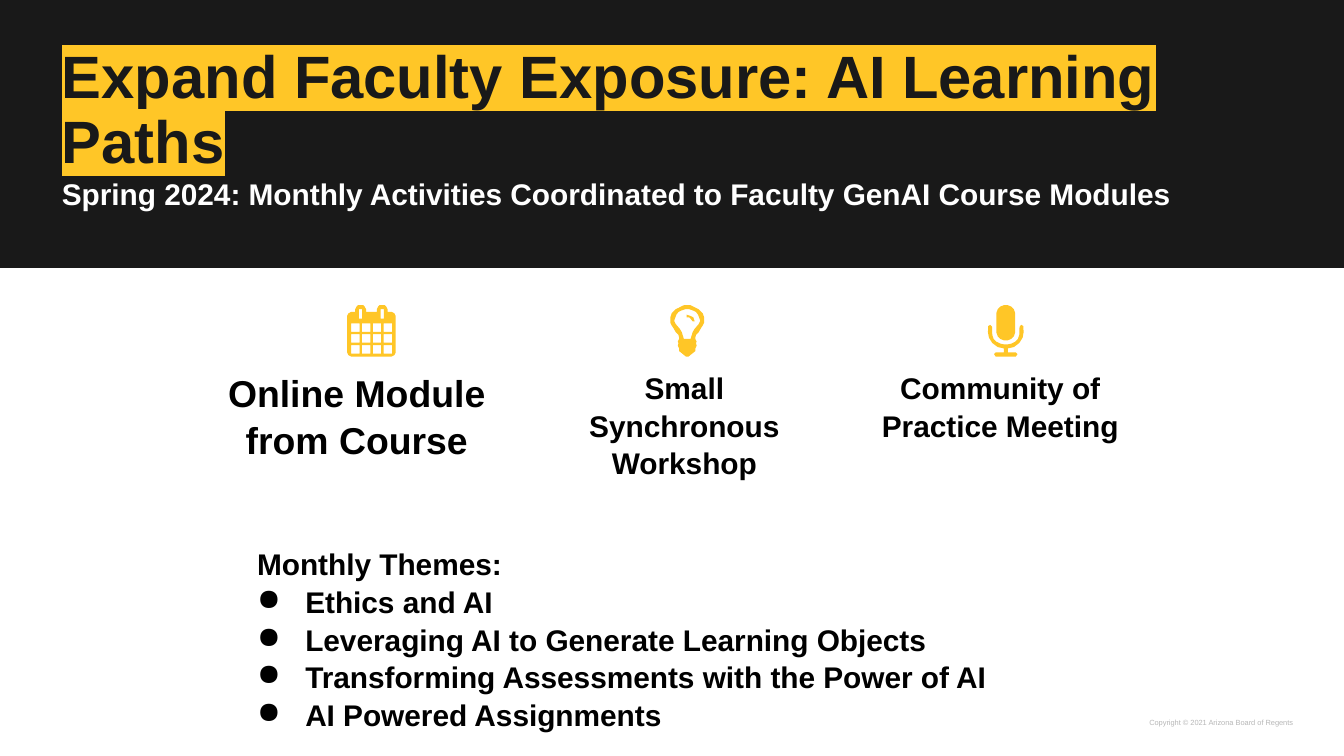
from dataclasses import dataclass

from lxml import etree
from pptx import Presentation
from pptx.dml.color import RGBColor
from pptx.enum.shapes import MSO_SHAPE
from pptx.enum.text import PP_ALIGN
from pptx.oxml.ns import qn
from pptx.util import Cm, Pt

LEFT, CENTER, RIGHT = PP_ALIGN.LEFT, PP_ALIGN.CENTER, PP_ALIGN.RIGHT
RECTANGLE = MSO_SHAPE.RECTANGLE


@dataclass(frozen=True)
class Theme:
    font: str = "Arial"
    dark: str = "191919"
    gold: str = "FFC627"
    white: str = "FFFFFF"
    black: str = "000000"
    grey: str = "B7B7B7"
    title: int = 32
    lead: int = 20
    body: int = 16
    credit: int = 4


THEME = Theme()
GRID = 38  # icon drawings are 38 units tall


def rgb(value):
    return RGBColor.from_string(value)


def add_text(slide, box, lines, size, color, bold=True, align=LEFT,
             spacing=1.05, inset=0, highlight=None):
    tf = slide.shapes.add_textbox(*box).text_frame
    tf.word_wrap = True
    tf.margin_left = tf.margin_right = tf.margin_top = tf.margin_bottom = inset
    tf.text = "\n".join(lines)
    for p in tf.paragraphs:
        p.alignment, p.line_spacing = align, spacing
        for r in p.runs:
            font = r.font
            font.name, font.size, font.bold = THEME.font, Pt(size), bold
            font.color.rgb = rgb(color)
            if highlight:
                mark = etree.Element(qn("a:highlight"))
                etree.SubElement(mark, qn("a:srgbClr"), val=highlight)
                r._r.rPr.find(qn("a:solidFill")).addnext(mark)
    return tf


def indent(p, margin, first=0, bullet=None):
    pPr = p._p.get_or_add_pPr()
    pPr.set("marL", str(margin))
    pPr.set("indent", str(first))
    if bullet:
        color = etree.SubElement(pPr, qn("a:buClr"))
        etree.SubElement(color, qn("a:srgbClr"), val=THEME.black)
        etree.SubElement(pPr, qn("a:buChar"), char=bullet)


# Icon outlines
def rect(x, y, w, h):
    return [(x, y), (x + w, y), (x + w, y + h), (x, y + h)]


def mirror(half, axis):
    """Close a right-hand half outline, given as offsets from the axis."""
    return ([(axis + x, y) for x, y in half]
            + [(axis - x, y) for x, y in reversed(half)])


def calendar():
    body = mirror([(4, 5), (4, 3), (5, 1), (6, 0), (10, 0), (11, 1), (12, 3),
                   (12, 5), (15, 5), (17, 6), (18, 8), (18, 35), (17, 37),
                   (15, 38)], 18)
    rings = [rect(x, 3, 2.5, 7) for x in (8.75, 24.75)]
    days = [rect(3 + 8 * col, 13.5 + 8 * row, 6.3, 6.3)
            for row in range(3) for col in range(4)]
    return [body, *rings, *days]


def light_bulb():
    glass = [(0, 0), (2.5, 0), (4.5, 1), (6.5, 2), (8.5, 3), (10.5, 5),
             (11.5, 6), (12.5, 9), (12.5, 13), (11.5, 15), (10.5, 16.5),
             (8.5, 20), (6.5, 22), (6, 24), (6, 25), (7, 27), (6.5, 28),
             (7, 30), (6, 32), (6, 34), (3.5, 36), (1, 38)]
    hollow = [(1.5, 3), (4.5, 4), (6.5, 5), (8, 7), (9.5, 11), (9.5, 12),
              (8.5, 14), (5.5, 17.5), (4, 20), (2.5, 25)]
    glint = [(12, 7), (15, 8), (17, 9), (18, 12), (16.5, 12), (15, 10),
             (14, 9), (12, 9)]
    return [mirror(glass, 12.5), mirror(hollow, 12.5), glint]


def microphone():
    capsule = [(1.5, 0), (4, 1), (6, 3), (7, 6), (7, 20), (6, 23), (4, 25),
               (1.5, 26)]
    stand = [(1.5, 29), (4, 28.5), (7, 27), (9, 25), (10, 22), (10.2, 16),
             (11.5, 14.5), (13, 15.5), (13.2, 20), (12.5, 24), (10, 28),
             (6, 31), (1.5, 32), (1.5, 35), (7.5, 35), (8.7, 36.2),
             (7.5, 38)]
    return [mirror(capsule, 13.3), mirror(stand, 13.3)]


def add_icon(slide, left, top, height, outlines):
    fine = 10  # sub-units per grid unit
    fb = slide.shapes.build_freeform(scale=height / (GRID * fine))
    for points in outlines:
        (x, y), *rest = [(px * fine, py * fine) for px, py in points]
        fb.move_to(x, y)
        fb.add_line_segments(rest, close=True)
    sp = fb.convert_to_shape(left, top)
    sp.shadow.inherit = False
    sp.fill.solid()
    sp.fill.fore_color.rgb = rgb(THEME.gold)
    sp.line.fill.background()


# Slide regions
def add_banner(slide, left, top, width, height):
    sp = slide.shapes.add_shape(RECTANGLE, left, top, width, height)
    sp.shadow.inherit = False
    sp.fill.solid()
    sp.fill.fore_color.rgb = sp.line.color.rgb = rgb(THEME.dark)
    sp.line.width = Pt(0.75)
    x, w = left + Cm(1.17), width - Cm(2.13)
    add_text(slide, (x, top + Cm(0.89), w, Cm(2.74)),
             ["Expand Faculty Exposure: AI Learning Paths"], THEME.title,
             THEME.dark, spacing=0.9, highlight=THEME.gold)
    add_text(slide, (x, top + Cm(3.4), w, Cm(0.89)),
             ["Spring 2024: Monthly Activities Coordinated to Faculty GenAI "
              "Course Modules"], THEME.body,
             THEME.white, spacing=0.9, highlight=THEME.dark)


def add_activity(slide, left, top, width, height, icon, icon_offset, label, size):
    icon_height = Cm(0.97)
    add_icon(slide, left + icon_offset, top, icon_height, icon)
    label_top = Cm(1.19)
    add_text(slide, (left, top + label_top, width, height - label_top),
             [label], size, THEME.black, align=CENTER)


def add_themes(slide, left, top, width, height):
    tf = add_text(slide, (left, top, width, height),
                  ["Monthly Themes:", "Ethics and AI",
                   "Leveraging AI to Generate Learning Objects",
                   "Transforming Assessments with the Power of AI",
                   "AI Powered Assignments"], THEME.body, THEME.black)
    heading, *items = tf.paragraphs
    indent(heading, Cm(0.36))
    for p in items:
        indent(p, Cm(1.27), Cm(-0.91), "●")


def add_credit(slide, left, top, width, height):
    add_text(slide, (left, top, width, height),
             ["Copyright © 2021 Arizona Board of Regents"], THEME.credit,
             THEME.grey, bold=False, align=RIGHT, spacing=1, inset=Cm(0.25))


def main():
    prs = Presentation()
    prs.slide_width, prs.slide_height = Cm(25.4), Cm(14.29)
    slide = prs.slides.add_slide(prs.slide_layouts[6])

    add_credit(slide, Cm(20.73), Cm(13.49), Cm(3.96), Cm(0.64))
    add_banner(slide, 0, 0, prs.slide_width, Cm(5.06))
    activities = [
        (4.27, calendar(), 2.29, "Online Module from Course", THEME.lead),
        (10.46, light_bulb(), 2.21, "Small Synchronous Workshop", THEME.body),
        (16.43, microphone(), 2.24, "Community of Practice Meeting", THEME.body),
    ]
    for left, icon, offset, label, size in activities:
        add_activity(slide, Cm(left), Cm(5.77), Cm(4.95), Cm(7.44),
                     icon, Cm(offset), label, size)
    add_themes(slide, Cm(4.5), Cm(10.29), Cm(18.36), Cm(6.25))

    prs.save("out.pptx")


if __name__ == "__main__":
    main()
